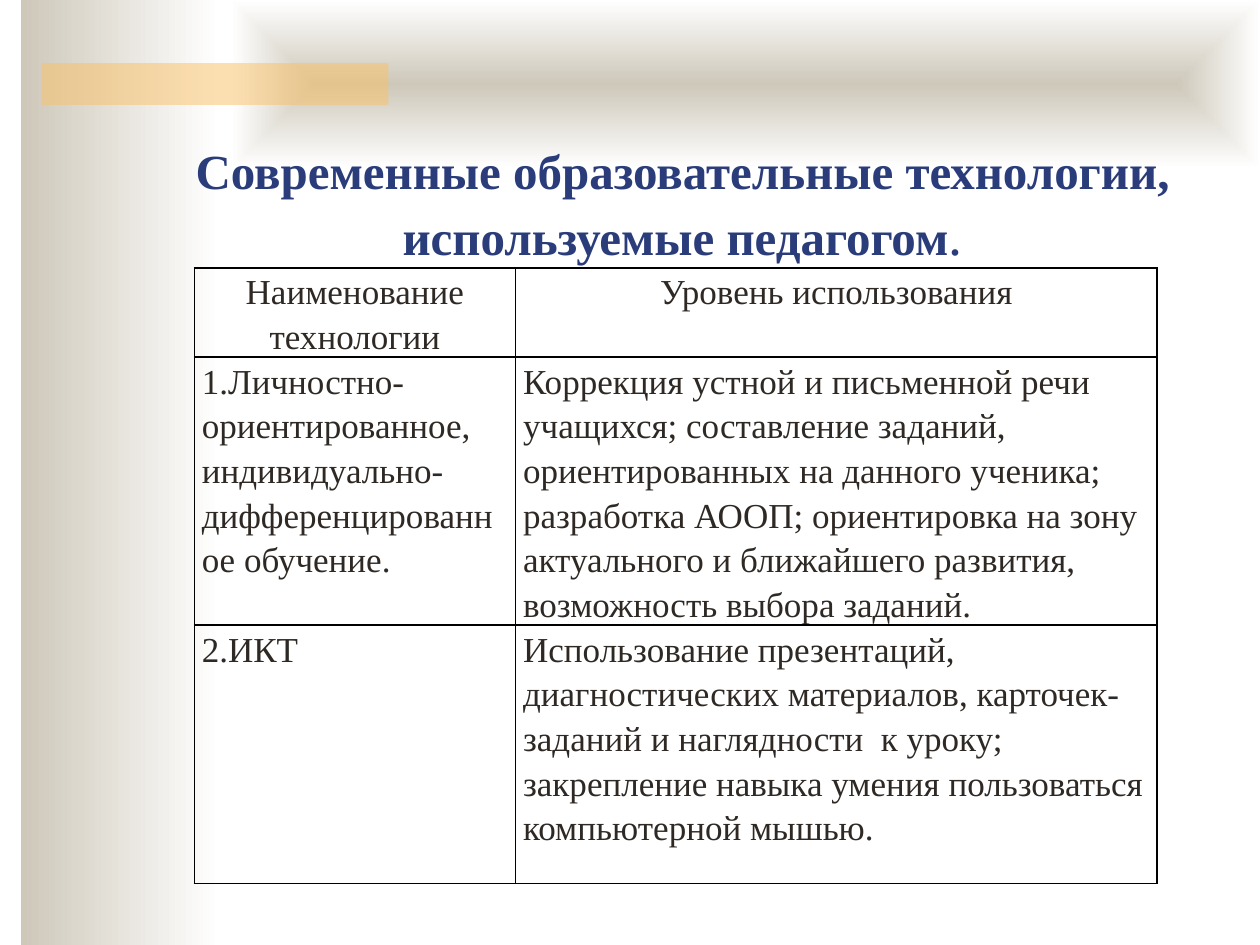
from dataclasses import dataclass
from typing import NamedTuple

from lxml.etree import SubElement
from pptx import Presentation
from pptx.dml.color import RGBColor
from pptx.enum.shapes import MSO_SHAPE
from pptx.enum.text import MSO_ANCHOR, MSO_AUTO_SIZE, PP_ALIGN
from pptx.oxml import parse_xml
from pptx.oxml.ns import nsdecls, qn
from pptx.util import Emu, Inches, Pt


@dataclass(frozen=True)
class Theme:
    """Colours, font and type sizes."""
    sand: str = "CEC8BA"
    white: str = "FFFFFF"
    gold: str = "FAC164"
    blue: str = "2A3D7A"
    ink: str = "2E2924"
    rule: str = "000000"
    face: str = "Times New Roman"
    head: int = 28
    stop: int = 32
    body: int = 20


class Box(NamedTuple):
    """A place on a grid of 120 columns and 90 rows."""
    left: float
    top: float
    width: float
    height: float


LOOK = Theme()
SIDE = Box(2, 0, 19, 90)
CROWN = Box(22, 0, 98, 16)
BAR = Box(4, 6, 33, 4)
TITLE = Box(14, 11, 102, 15)
COLS = (30.6, 61.1)
ROWS = (4.9, 14.8, 24.6)
TABLE = Box(18.5, 25.5, sum(COLS), sum(ROWS))
CELLS = (
    ("Наименование технологии", "Уровень использования"),
    ("1.Личностно-ориентированное, индивидуально-дифференцированное обучение.",
     "Коррекция устной и письменной речи учащихся; составление заданий, "
     "ориентированных на данного ученика; разработка АООП; ориентировка на зону "
     "актуального и ближайшего развития, возможность выбора заданий."),
    ("2.ИКТ",
     "Использование презентаций, диагностических материалов, карточек-заданий "
     "и наглядности  к уроку; закрепление навыка умения пользоваться "
     "компьютерной мышью."),
)


def unit(count: float) -> Emu:
    """Turn grid steps into a length."""
    return Inches(count / 12)


def place(box: Box) -> list[Emu]:
    """Give the four lengths of a box."""
    return [unit(count) for count in box]


def style(font, size: int, ink: str) -> None:
    """Set face, size and colour."""
    font.name = LOOK.face
    font.size = Pt(size)
    font.color.rgb = RGBColor.from_string(ink)


def panel(slide, box: Box):
    """Draw a plain rectangle without line or shadow."""
    shape = slide.shapes.add_shape(MSO_SHAPE.RECTANGLE, *place(box))
    shape.shadow.inherit = False
    shape.line.fill.background()
    return shape


def fade(slide, box: Box, inward: bool = False) -> None:
    """Draw a panel that fades from sand to white."""
    shape = panel(slide, box)
    shape.fill.gradient()
    shape.fill.gradient_angle = 0
    for stop, tint in zip(shape.fill.gradient_stops, (LOOK.sand, LOOK.white)):
        stop.color.rgb = RGBColor.from_string(tint)
    if inward:
        line = next(shape.element.iter(qn("a:lin")))
        line.getparent().replace(line, parse_xml(
            f'<a:path {nsdecls("a")} path="shape">'
            '<a:fillToRect l="50000" t="50000" r="50000" b="50000"/></a:path>'))


def glaze(slide, box: Box) -> None:
    """Draw the half clear gold bar."""
    shape = panel(slide, box)
    shape.fill.solid()
    shape.fill.fore_color.rgb = RGBColor.from_string(LOOK.gold)
    tint = shape.element.spPr.find(qn("a:solidFill"))[0]
    SubElement(tint, qn("a:alpha"), val="50000")


def title(slide) -> None:
    """Fill the title and bring it to the front."""
    shape = slide.shapes.title
    shape.left, shape.top, shape.width, shape.height = place(TITLE)
    slide.shapes.element.append(shape.element)
    frame = shape.text_frame
    frame.auto_size = MSO_AUTO_SIZE.NONE
    frame.vertical_anchor = MSO_ANCHOR.BOTTOM
    para = frame.paragraphs[0]
    para.alignment = PP_ALIGN.CENTER
    parts = (
        ("Современные образовательные технологии, используемые педагогом", LOOK.head, True),
        (".", LOOK.stop, False),
    )
    for text, size, bold in parts:
        run = para.add_run()
        run.text = text
        run.font.bold = bold
        style(run.font, size, LOOK.blue)


def edge(cell) -> None:
    """Rule all four sides of a cell."""
    props = cell._tc.get_or_add_tcPr()
    for spot, side in enumerate("LRTB"):
        props.insert(spot, parse_xml(
            f'<a:ln{side} {nsdecls("a")} w="{Pt(1)}"><a:solidFill>'
            f'<a:srgbClr val="{LOOK.rule}"/></a:solidFill></a:ln{side}>'))


def write(cell, text: str, align: PP_ALIGN) -> None:
    """Fill and format one cell."""
    cell.text = text
    cell.margin_left = cell.margin_right = Inches(0.06)
    cell.margin_top = cell.margin_bottom = 0
    cell.fill.background()
    edge(cell)
    para = cell.text_frame.paragraphs[0]
    para.alignment = align
    para.line_spacing = 1.15
    style(para.font, LOOK.body, LOOK.ink)


def table(slide) -> None:
    """Draw the table of methods."""
    grid = slide.shapes.add_table(len(ROWS), len(COLS), *place(TABLE)).table
    grid.first_row = grid.horz_banding = False
    for col, width in zip(grid.columns, COLS):
        col.width = unit(width)
    for row, height, texts in zip(grid.rows, ROWS, CELLS):
        row.height = unit(height)
        align = PP_ALIGN.CENTER if texts is CELLS[0] else PP_ALIGN.LEFT
        for cell, text in zip(row.cells, texts):
            write(cell, text, align)


def main() -> None:
    """Build and save the slide."""
    deck = Presentation()
    deck.slide_width, deck.slide_height = unit(120), unit(90)
    slide = deck.slides.add_slide(deck.slide_layouts[5])
    fade(slide, SIDE)
    fade(slide, CROWN, inward=True)
    glaze(slide, BAR)
    title(slide)
    table(slide)
    deck.save("out.pptx")


if __name__ == "__main__":
    main()
